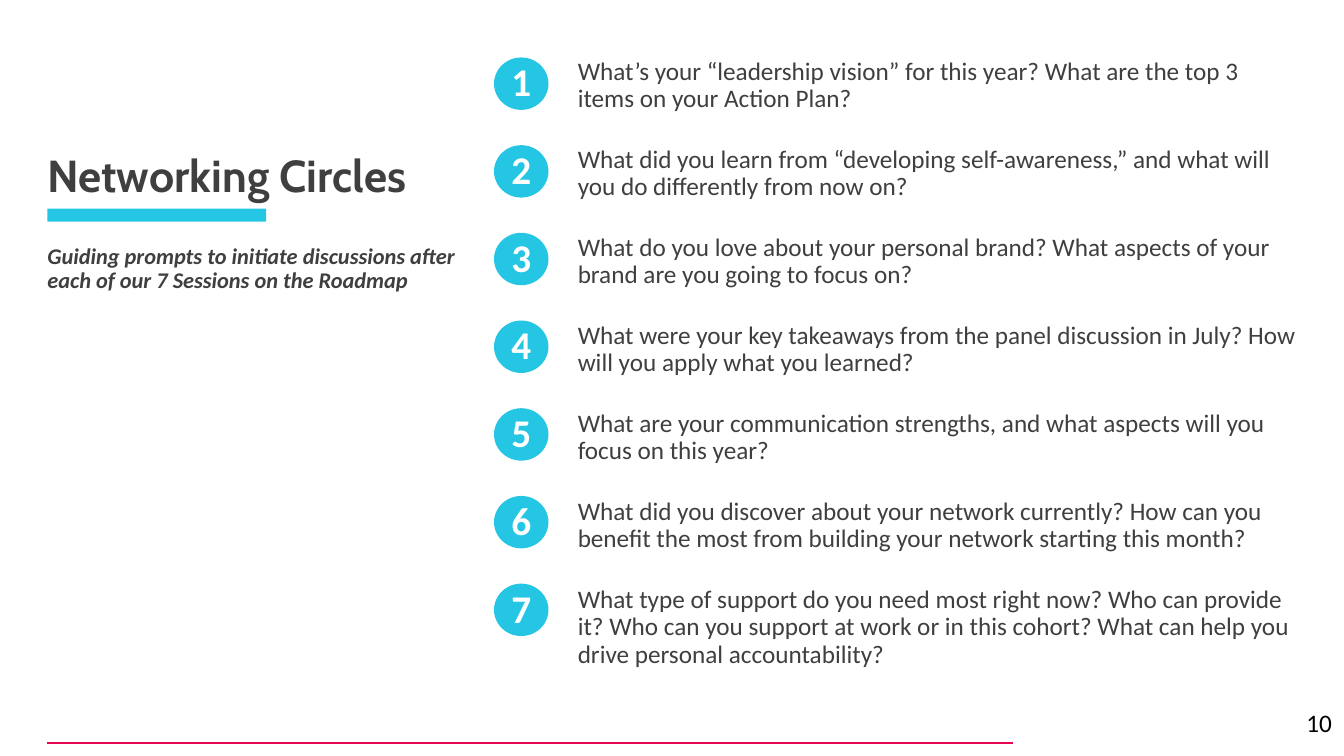
from dataclasses import dataclass

from pptx import Presentation
from pptx import util as u
from pptx.dml.color import RGBColor
from pptx.enum import shapes, text
from pptx.oxml.ns import qn

# Content
TITLE = "Networking Circles"
SUBTITLE = "Guiding prompts to initiate discussions after each of our 7 Sessions on the Roadmap"
PAGE_NUMBER = "10"
PROMPTS = [
    "What’s your “leadership vision” for this year? What are the top 3 items on your Action Plan?",
    "What did you learn from “developing self-awareness,” and what will you do differently from now on?",
    "What do you love about your personal brand? What aspects of your brand are you going to focus on?",
    "What were your key takeaways from the panel discussion in July? How will you apply what you learned?",
    "What are your communication strengths, and what aspects will you focus on this year?",
    "What did you discover about your network currently? How can you benefit the most from building "
    "your network starting this month?",
    "What type of support do you need most right now? Who can provide it? Who can you support at work "
    "or in this cohort? What can help you drive personal accountability?",
]


@dataclass(frozen=True)
class Theme:
    heading_font: str = "Cabin"
    body_font: str = "Calibri"
    ink: str = "3F3F3F"
    black: str = "000000"
    white: str = "FFFFFF"
    cyan: str = "25C6E3"
    pink: str = "E80554"
    title_size: int = 32
    badge_size: int = 28
    body_size: int = 18
    subtitle_size: int = 16


THEME = Theme()

# Layout, 100 px to the inch
PX = 9144
MARGIN = 47
COLUMN_WIDTH = 430
BADGE_LEFT, BADGE_TOP, BADGE_WIDTH, BADGE_HEIGHT, BADGE_PITCH = 490, 57, 54, 52, 87
PROMPT_INDENT = 29


def px(*lengths):
    return [u.Emu(length * PX) for length in lengths]


def color(value):
    return RGBColor.from_string(value)


def set_insets(frame, left=0, top=0, right=0, bottom=0):
    (frame.margin_left, frame.margin_top,
     frame.margin_right, frame.margin_bottom) = px(left, top, right, bottom)


def style(para, size, ink, font=THEME.body_font, bold=False, italic=False):
    for span in para.runs:
        span.font.name = font
        span.font.size = u.Pt(size)
        span.font.color.rgb = color(ink)
        span.font.bold = bold
        span.font.italic = italic


def add_text(page, at, lines):
    box = page.shapes.add_textbox(*px(*at))
    frame = box.text_frame
    frame.word_wrap = True
    set_insets(frame)
    frame.text = "\n".join(lines)
    return frame


def add_solid(page, kind, at, fill):
    shape = page.shapes.add_shape(kind, *px(*at))
    shape.shadow.inherit = False
    shape.fill.solid()
    shape.fill.fore_color.rgb = color(fill)
    shape.line.fill.background()
    return shape


def add_heading(page):
    add_solid(page, shapes.MSO_SHAPE.RECTANGLE, (MARGIN, 207, 217, 13), THEME.cyan)

    title = page.shapes.title
    title.left, title.top, title.width, title.height = px(MARGIN, 47, COLUMN_WIDTH, 154)
    frame = title.text_frame
    frame.text = TITLE
    frame.word_wrap = True
    frame.auto_size = text.MSO_AUTO_SIZE.NONE
    frame.vertical_anchor = text.MSO_ANCHOR.BOTTOM
    set_insets(frame)
    para = frame.paragraphs[0]
    para.alignment = text.PP_ALIGN.LEFT
    para.line_spacing = 0.9
    style(para, THEME.title_size, THEME.ink, THEME.heading_font, bold=True)

    para = add_text(page, (MARGIN, 243, COLUMN_WIDTH, 399), [SUBTITLE]).paragraphs[0]
    para.line_spacing = 0.9
    style(para, THEME.subtitle_size, THEME.ink, bold=True, italic=True)


def add_prompts(page):
    frame = add_text(page, (BADGE_LEFT + BADGE_WIDTH, 58, 742, 594), PROMPTS)
    for index, para in enumerate(frame.paragraphs):
        para._p.get_or_add_pPr().set("marL", str(PROMPT_INDENT * PX))
        para.line_spacing = 0.9
        if index:
            para.space_before = u.Pt(24)
        style(para, THEME.body_size, THEME.ink)


def add_badges(page):
    for index in range(len(PROMPTS)):
        at = (BADGE_LEFT, BADGE_TOP + index * BADGE_PITCH, BADGE_WIDTH, BADGE_HEIGHT)
        badge = add_solid(page, shapes.MSO_SHAPE.FLOWCHART_CONNECTOR, at, THEME.cyan)
        frame = badge.text_frame
        frame.text = str(index + 1)
        frame.word_wrap = False
        frame.vertical_anchor = text.MSO_ANCHOR.MIDDLE
        set_insets(frame, bottom=5)
        para = frame.paragraphs[0]
        para.alignment = text.PP_ALIGN.CENTER
        style(para, THEME.badge_size, THEME.white, bold=True)


def add_footer(page):
    rule = page.shapes.add_connector(shapes.MSO_CONNECTOR.STRAIGHT, *px(MARGIN, 737, 1005, 737))
    rule.line.color.rgb = color(THEME.pink)
    rule.line.width = u.Pt(1.5)
    properties = rule._element.spPr
    properties.append(properties.makeelement(qn("a:effectLst"), {}))

    frame = add_text(page, (1286, 697, 47, 47), [PAGE_NUMBER])
    set_insets(frame, 10, 5, 10, 5)
    style(frame.paragraphs[0], THEME.body_size, THEME.black)


def main():
    deck = Presentation()
    deck.slide_width, deck.slide_height = px(1333, 750)
    title_only = deck.slide_layouts[5]
    page = deck.slides.add_slide(title_only)
    add_heading(page)
    add_prompts(page)
    add_badges(page)
    add_footer(page)
    deck.save("out.pptx")


if __name__ == "__main__":
    main()
